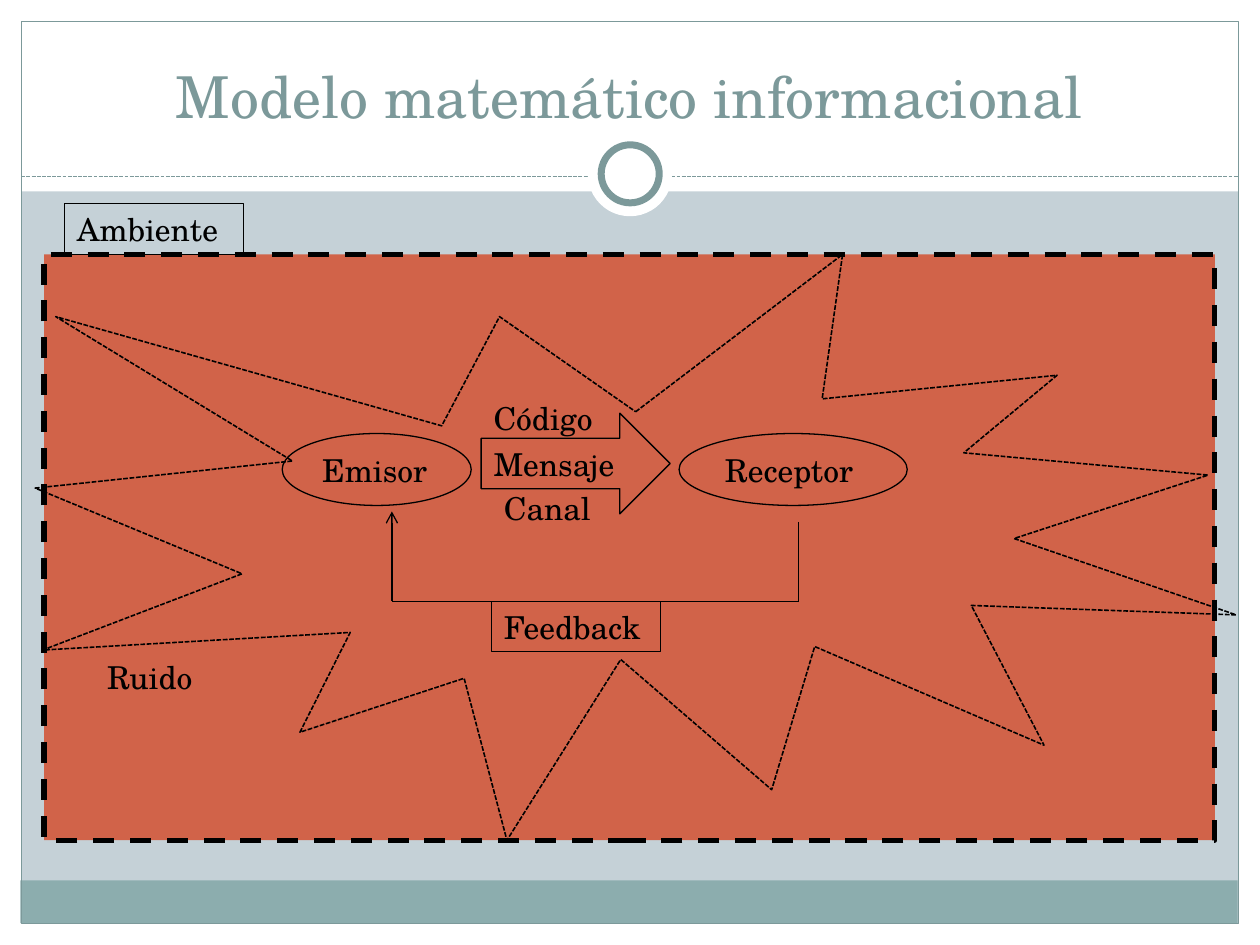
from lxml.etree import SubElement
from pptx import Presentation
from pptx.dml.color import RGBColor
from pptx.enum.dml import MSO_LINE
from pptx.enum.shapes import MSO_CONNECTOR, MSO_SHAPE
from pptx.enum.text import MSO_ANCHOR, PP_ALIGN
from pptx.oxml.ns import qn
from pptx.util import Cm, Pt

BLACK = RGBColor(0x00, 0x00, 0x00)
WHITE = RGBColor(0xFF, 0xFF, 0xFF)
GRAY = RGBColor(0x7C, 0x99, 0x9A)
TEAL = RGBColor(0x8C, 0xAD, 0xAE)
PALE = RGBColor(0xC5, 0xD1, 0xD7)
RUST = RGBColor(0xD1, 0x63, 0x49)


def write(shape, text, size=18, color=BLACK, align=PP_ALIGN.LEFT,
          anchor=MSO_ANCHOR.MIDDLE, font="TeX Gyre Schola"):
    frame = shape.text_frame
    frame.word_wrap = True
    frame.vertical_anchor = anchor
    para = frame.paragraphs[0]
    para.alignment = align
    run = para.add_run()
    run.text = text
    run.font.name = font
    run.font.size = Pt(size)
    run.font.color.rgb = color


class Board:
    def __init__(self, slide, ink=BLACK, width=0.75):
        self.slide = slide
        self.ink = ink
        self.width = width

    def stroke(self, line, color=None, width=None, dash=None):
        line.color.rgb = color or self.ink
        line.width = Pt(width or self.width)
        if dash:
            line.dash_style = dash

    def shape(self, kind, box, fill=None, line=True, text=None, **style):
        item = self.slide.shapes.add_shape(kind, *map(Cm, box))
        item.shadow.inherit = False
        if fill:
            item.fill.solid()
            item.fill.fore_color.rgb = fill
        else:
            item.fill.background()
        if line:
            self.stroke(item.line, **style)
        else:
            item.line.fill.background()
        if text:
            write(item, text)

    def label(self, text, box, **style):
        write(self.slide.shapes.add_textbox(*map(Cm, box)), text, **style)

    def line(self, start, end, arrow=False, **style):
        item = self.slide.shapes.add_connector(
            MSO_CONNECTOR.STRAIGHT, *map(Cm, start + end))
        self.stroke(item.line, **style)
        if arrow:
            SubElement(item.line._get_or_add_ln(), qn("a:tailEnd"), type="arrow")
        SubElement(item._element.spPr, qn("a:effectLst"))


def frame(board):
    rect, oval = MSO_SHAPE.RECTANGLE, MSO_SHAPE.OVAL
    for box in ((0, 18.62, 25.4, 0.43), (0, 0, 25.4, 3.86),
                (0, 0, 0.43, 19.05), (24.97, 0, 0.43, 19.05)):
        board.shape(rect, box, fill=WHITE, line=False)
    board.shape(rect, (0.41, 17.75, 24.54, 0.86), fill=TEAL, line=False)
    board.shape(rect, (0.43, 0.43, 24.54, 18.19), color=GRAY)
    board.line((0.43, 3.56), (24.97, 3.56), color=GRAY,
               dash=MSO_LINE.SQUARE_DOT)
    board.shape(oval, (11.85, 2.66, 1.7, 1.7), fill=WHITE, line=False)
    board.shape(oval, (12.12, 2.92, 1.17, 1.17), fill=WHITE,
                color=GRAY, width=4)
    board.label("Modelo matemático informacional", (0.84, 0.64, 23.7, 2.11),
                size=33, color=GRAY, align=PP_ALIGN.CENTER,
                anchor=MSO_ANCHOR.BOTTOM)


def model(board):
    rect, oval = MSO_SHAPE.RECTANGLE, MSO_SHAPE.OVAL
    board.shape(rect, (0.89, 5.13, 23.6, 11.81), fill=RUST,
                width=3, dash=MSO_LINE.DASH)
    for kind, text, box in (
            (rect, "Ambiente", (1.3, 4.11, 3.61, 1.02)),
            (oval, "Emisor", (5.69, 8.74, 3.81, 1.45)),
            (MSO_SHAPE.RIGHT_ARROW, "Mensaje", (9.7, 8.33, 3.81, 2.03)),
            (oval, "Receptor", (13.69, 8.74, 4.6, 1.45)),
            (rect, "Feedback", (9.91, 12.12, 3.4, 1.02))):
        board.shape(kind, box, text=text)
    for text, box in (("Código", (9.7, 7.92, 2.59, 1.02)),
                      ("Canal", (9.91, 9.73, 2.59, 1.02)),
                      ("Ruido", (1.91, 13.13, 2.79, 1.02))):
        board.label(text, box)
    route = ((16.1, 10.52), (16.1, 12.12), (7.9, 12.12), (7.9, 10.31))
    for start, end in zip(route, route[1:]):
        board.line(start, end, arrow=end == route[-1])
    board.shape(MSO_SHAPE.EXPLOSION1, (0.71, 5.13, 24.21, 11.81),
                width=0.9, dash=MSO_LINE.SQUARE_DOT)


def main():
    deck = Presentation()
    deck.slide_width, deck.slide_height = Cm(25.4), Cm(19.05)
    slide = deck.slides.add_slide(deck.slide_layouts[6])
    slide.background.fill.solid()
    slide.background.fill.fore_color.rgb = PALE
    board = Board(slide)
    frame(board)
    model(board)
    deck.save("out.pptx")


if __name__ == "__main__":
    main()
